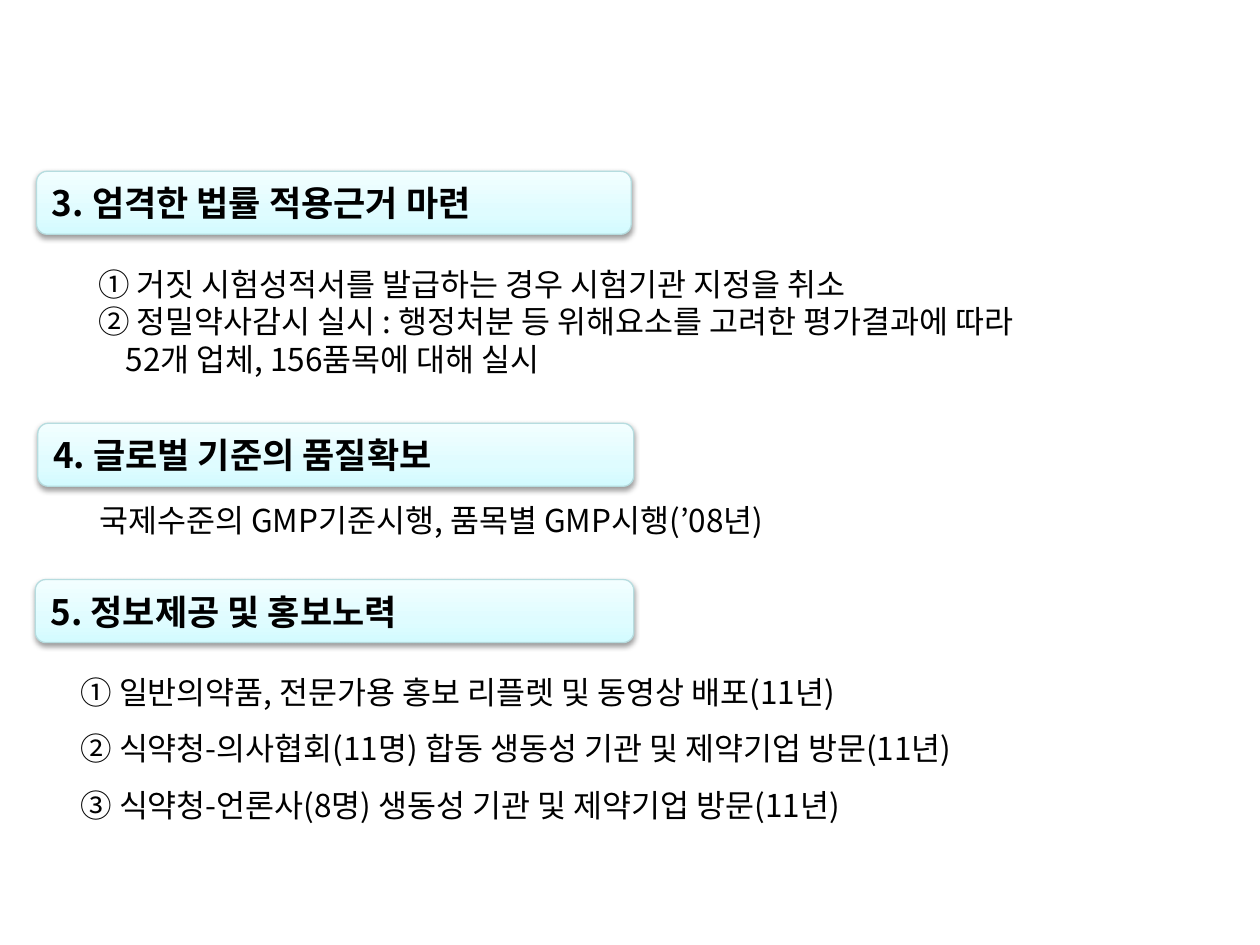
from copy import deepcopy

from lxml import etree
from pptx import Presentation
from pptx.dml.color import RGBColor
from pptx.enum.shapes import MSO_SHAPE
from pptx.enum.text import MSO_ANCHOR, MSO_AUTO_SIZE, PP_ALIGN
from pptx.oxml import parse_xml
from pptx.oxml.ns import nsdecls, qn
from pptx.util import Inches, Pt

ROUNDED = MSO_SHAPE.ROUNDED_RECTANGLE
MIDDLE = MSO_ANCHOR.MIDDLE
GROW = MSO_AUTO_SIZE.SHAPE_TO_FIT_TEXT
LEFT = PP_ALIGN.LEFT

FONT = "Noto Sans CJK KR"
COLORS = {
    "text": "000000",
    "shadow": "000000",
    "border": "B6DCDF",
    "bottom": "D3FBFF",
    "middle": "DFFCFF",
    "top": "F2FEFF",
}
HEADING_STOPS = [(0, "bottom"), (0.35, "middle"), (1, "top")]

# Each section: heading, its box, body lines as (text, indent), body box, line spacing
SECTIONS = [
    (
        "3. 엄격한 법률 적용근거 마련",
        (0.29, 1.36, 4.72, 0.5),
        [
            ("① 거짓 시험성적서를 발급하는 경우 시험기관 지정을 취소", 0),
            ("② 정밀약사감시 실시 : 행정처분 등 위해요소를 고려한 평가결과에 따라", 0),
            ("52개 업체, 156품목에 대해 실시", 0.22),
        ],
        (0.68, 2.05, 8.73, 1.01),
        1.0,
    ),
    (
        "4. 글로벌 기준의 품질확보",
        (0.3, 3.36, 4.73, 0.5),
        [("국제수준의 GMP기준시행, 품목별 GMP시행(’08년)", 0.14)],
        (0.55, 3.93, 9.12, 0.4),
        1.0,
    ),
    (
        "5. 정보제공 및 홍보노력",
        (0.28, 4.6, 4.75, 0.5),
        [
            ("① 일반의약품, 전문가용 홍보 리플렛 및 동영상 배포(11년)", 0),
            ("② 식약청-의사협회(11명) 합동 생동성 기관 및 제약기업 방문(11년)", 0),
            ("③ 식약청-언론사(8명) 생동성 기관 및 제약기업 방문(11년)", 0),
        ],
        (0.54, 5.14, 8.75, 1.46),
        1.5,
    ),
]


def rgb(name):
    return RGBColor.from_string(COLORS[name])


def write(paragraph, text, size, bold=False):
    paragraph.text = text
    paragraph.alignment = LEFT
    for run in paragraph.runs:
        run.font.size = Pt(size)
        run.font.bold = bold
        run.font.color.rgb = rgb("text")
        run.font.name = FONT
        east_asian = etree.SubElement(run.font._element, qn("a:ea"))
        east_asian.set("typeface", FONT)


def fill_gradient(shape):
    """Fill from bottom to top with the three heading colours."""
    fill = shape.fill
    fill.gradient()
    fill.gradient_angle = 90
    stop_list = shape._element.spPr.find(".//" + qn("a:gsLst"))
    stop_list.insert(1, deepcopy(stop_list[0]))
    for stop, (position, color) in zip(fill.gradient_stops, HEADING_STOPS):
        stop.position = position
        stop.color.rgb = rgb(color)


def add_shadow(shape):
    shape.shadow.inherit = False
    effects = shape._element.spPr.find(qn("a:effectLst"))
    effects.append(parse_xml(
        f'<a:outerShdw {nsdecls("a")} blurRad="{Pt(3.1)}" dist="{Pt(1.6)}" '
        'dir="5400000" rotWithShape="0">'
        f'<a:srgbClr val="{COLORS["shadow"]}"><a:alpha val="38000"/></a:srgbClr>'
        '</a:outerShdw>'
    ))


def add_heading(slide, text, box):
    heading = slide.shapes.add_shape(ROUNDED, *map(Inches, box))
    fill_gradient(heading)
    heading.line.color.rgb = rgb("border")
    heading.line.width = Pt(0.75)
    add_shadow(heading)
    frame = heading.text_frame
    frame.word_wrap = True
    frame.vertical_anchor = MIDDLE
    write(frame.paragraphs[0], text, 20, bold=True)


def add_body(slide, lines, box, line_spacing):
    frame = slide.shapes.add_textbox(*map(Inches, box)).text_frame
    frame.word_wrap = True
    frame.auto_size = GROW
    for index, (text, indent) in enumerate(lines):
        paragraph = frame.add_paragraph() if index else frame.paragraphs[0]
        write(paragraph, text, 18)
        paragraph.line_spacing = line_spacing
        if indent:
            paragraph._p.get_or_add_pPr().set("marL", str(Inches(indent)))


def main():
    prs = Presentation()
    prs.slide_width, prs.slide_height = Inches(10), Inches(7.5)
    slide = prs.slides.add_slide(prs.slide_layouts[6])
    for heading, heading_box, lines, body_box, line_spacing in SECTIONS:
        add_heading(slide, heading, heading_box)
        add_body(slide, lines, body_box, line_spacing)
    prs.save("out.pptx")


if __name__ == "__main__":
    main()
